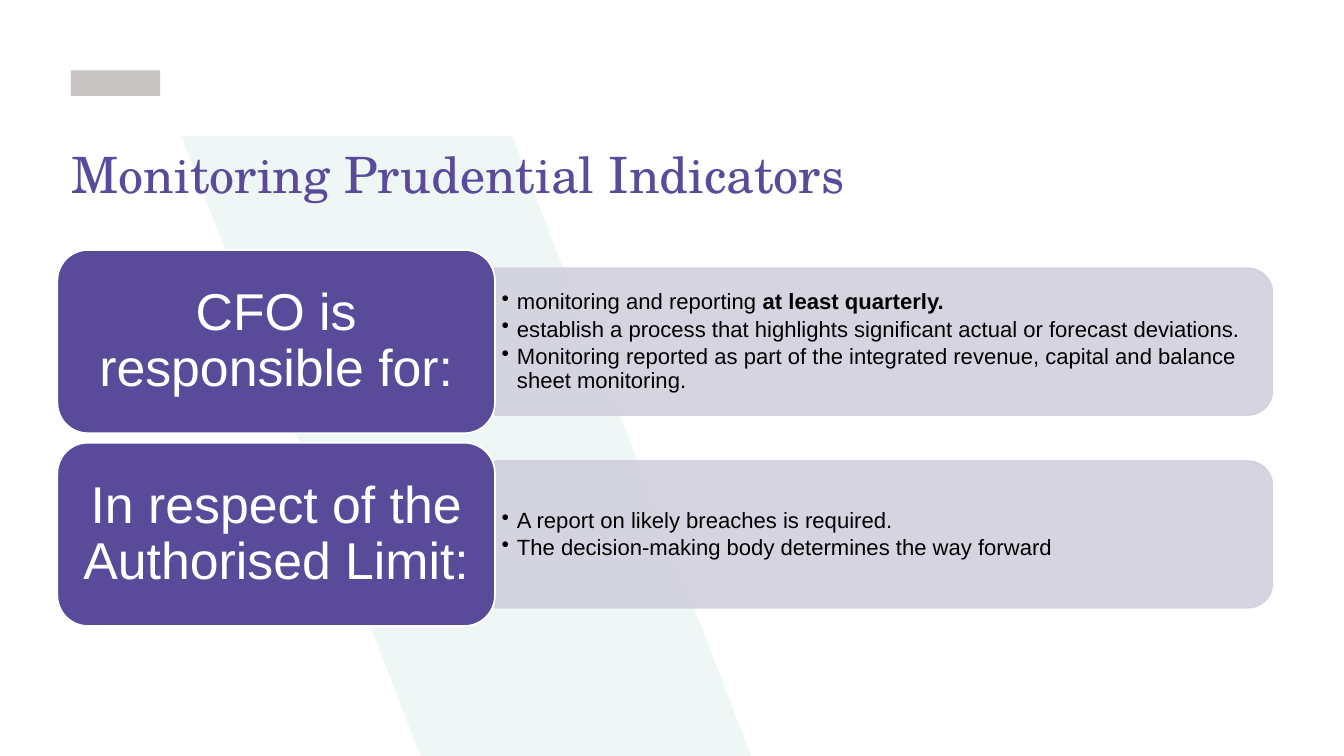
from lxml.etree import SubElement
from pptx import Presentation
from pptx.dml.color import RGBColor
from pptx.enum.shapes import MSO_SHAPE
from pptx.enum.text import MSO_ANCHOR, PP_ALIGN
from pptx.oxml.ns import qn
from pptx.util import Inches, Pt

PURPLE = RGBColor(0x5A, 0x4B, 0x9A)
LILAC = RGBColor(0xD2, 0xD0, 0xDE)
MINT = RGBColor(0xEE, 0xF7, 0xF5)
GREY = RGBColor(0xC7, 0xC4, 0xC3)
WHITE = RGBColor(0xFF, 0xFF, 0xFF)
BLACK = RGBColor(0, 0, 0)

ROWS = [
    ("CFO is responsible for:", [
        [("monitoring and reporting ", False), ("at least quarterly.", True)],
        [("establish a process that highlights significant actual or forecast deviations.", False)],
        [("Monitoring reported as part of the integrated revenue, capital and balance sheet monitoring.", False)],
    ]),
    ("In respect of the Authorised Limit:", [
        [("A report on likely breaches is required.", False)],
        [("The decision-making body determines the way forward", False)],
    ]),
]


class Deck:
    """Draws styled elements on one slide, placed by percent of its size."""

    def __init__(self, wide, high):
        self.prs = Presentation()
        self.prs.slide_width, self.prs.slide_height = Inches(wide), Inches(high)
        self.slide = self.prs.slides.add_slide(self.prs.slide_layouts[6])
        self.shapes = self.slide.shapes

    def place(self, x, y):
        return round(self.prs.slide_width * x / 100), round(self.prs.slide_height * y / 100)

    def paint(self, shape, fill, line=None):
        shape.shadow.inherit = False
        shape.fill.solid()
        shape.fill.fore_color.rgb = fill
        if line is None:
            shape.line.fill.background()
        else:
            shape.line.color.rgb = line
            shape.line.width = Pt(2)

    def font(self, para, name, size, color):
        para.font.name, para.font.size = name, Pt(size)
        para.font.color.rgb = color

    def frame(self, shape, side, end, anchor):
        frame = shape.text_frame
        frame.word_wrap = True
        frame.margin_left = frame.margin_right = Inches(side)
        frame.margin_top = frame.margin_bottom = Inches(end)
        frame.vertical_anchor = anchor
        return frame

    def band(self, points, fill):
        first, *rest = [self.place(*point) for point in points]
        path = self.shapes.build_freeform(*first)
        path.add_line_segments(rest)
        self.paint(path.convert_to_shape(), fill)

    def block(self, x, y, w, h, fill):
        shape = self.shapes.add_shape(MSO_SHAPE.RECTANGLE, *self.place(x, y), *self.place(w, h))
        self.paint(shape, fill)

    def title(self, x, y, w, h, text):
        box = self.shapes.add_textbox(*self.place(x, y), *self.place(w, h))
        para = self.frame(box, 0, 0, MSO_ANCHOR.TOP).paragraphs[0]
        para.text = text
        self.font(para, "TeX Gyre Schola", 59, PURPLE)

    def bar(self, x, y, w, h):
        left, top = self.place(x, y)
        wide, high = self.place(w, h)
        shift = (wide - high) // 2
        shape = self.shapes.add_shape(
            MSO_SHAPE.ROUND_2_SAME_RECTANGLE, left + shift, top - shift, high, wide)
        shape.rotation = 90
        self.paint(shape, LILAC, LILAC)
        for color in shape._element.spPr.iter(qn("a:srgbClr")):
            SubElement(color, qn("a:alpha"), val="90000")

    def card(self, x, y, w, h, text):
        shape = self.shapes.add_shape(
            MSO_SHAPE.ROUNDED_RECTANGLE, *self.place(x, y), *self.place(w, h))
        self.paint(shape, PURPLE, WHITE)
        para = self.frame(shape, 0.25, 0.13, MSO_ANCHOR.MIDDLE).paragraphs[0]
        para.text = text
        para.alignment = PP_ALIGN.CENTER
        para.line_spacing = 0.9
        self.font(para, "Arial", 61, WHITE)

    def bullets(self, x, y, w, h, items):
        box = self.shapes.add_textbox(*self.place(x, y), *self.place(w, h))
        frame = self.frame(box, 0.11, 0.05, MSO_ANCHOR.MIDDLE)
        for i, item in enumerate(items):
            para = frame.add_paragraph() if i else frame.paragraphs[0]
            para.line_spacing, para.space_after = 0.9, Pt(4)
            for text, bold in item:
                run = para.add_run()
                run.text, run.font.bold = text, bold
            self.font(para, "Arial", 26, BLACK)
            props = para._p.get_or_add_pPr()
            props.set("marL", str(Inches(0.25)))
            props.set("indent", str(-Inches(0.25)))
            mark = SubElement(props, qn("a:buChar"), char="•")
            props.find(qn("a:defRPr")).addprevious(mark)


def main():
    deck = Deck(21.99, 12.37)
    deck.block(5.28, 9.3, 6.64, 3.4, GREY)
    deck.band([(38.11, 18.03), (13.51, 18.03), (31.29, 100), (55.89, 100)], MINT)
    deck.title(5.32, 18.92, 69.49, 16.09, "Monitoring Prudential Indicators")
    for i, (head, items) in enumerate(ROWS):
        top = 33.06 + 25.5 * i
        deck.bar(36.83, top + 2.43, 57.84, 19.4)
        deck.bullets(36.83, top + 3.4, 57.34, 17.54, items)
        deck.card(4.27, top, 32.56, 24.25, head)
    deck.prs.save("out.pptx")


if __name__ == "__main__":
    main()
